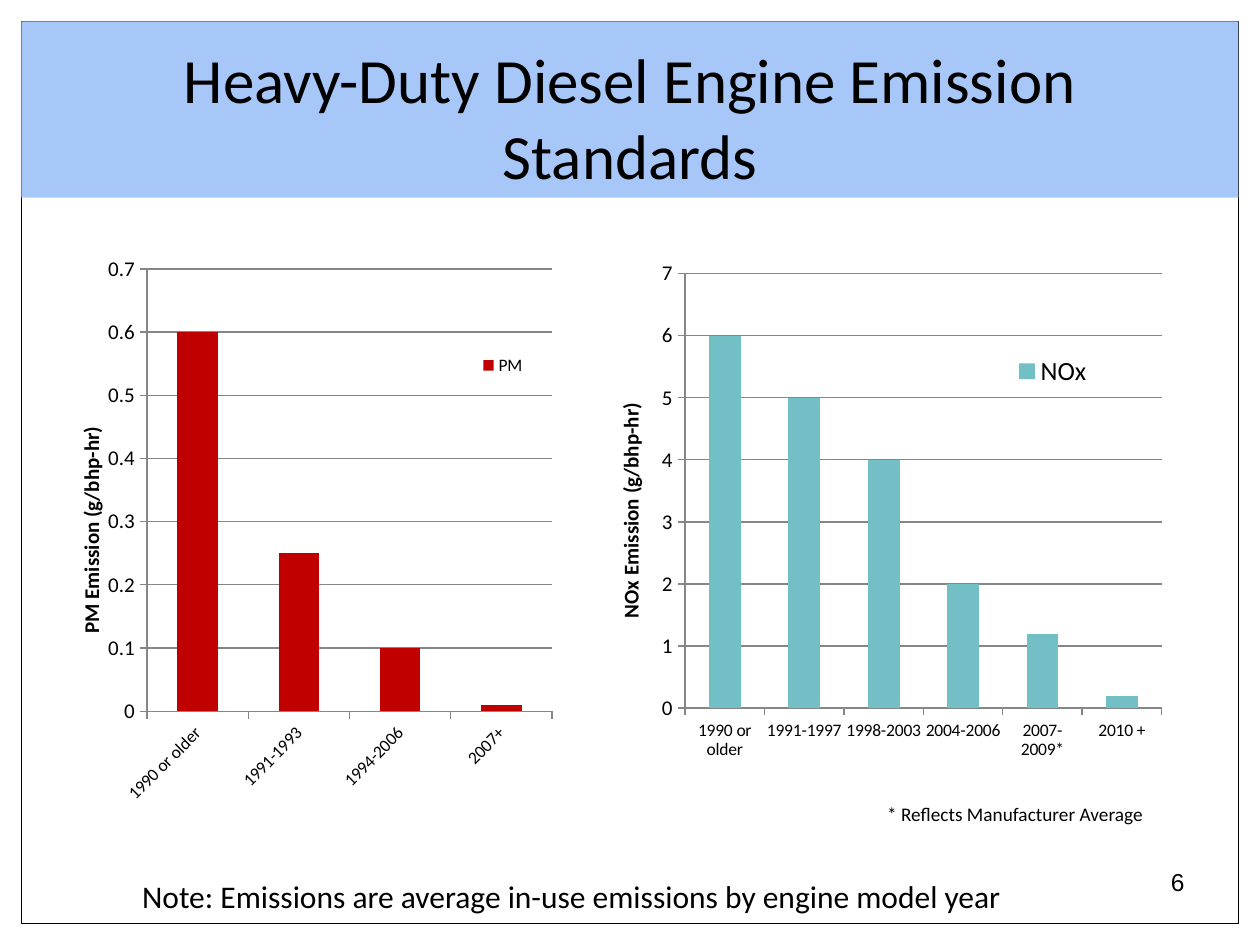
from dataclasses import dataclass
from lxml import etree
from pptx import Presentation, util as u
from pptx.chart import data as chart_data
from pptx.dml import color
from pptx.enum import chart as chart_enum, shapes, text
from pptx.oxml import ns


@dataclass(frozen=True)
class Theme:
    heading: str = "Calibri"
    plain: str = "Arial"
    ink: str = "000000"
    paper: str = "FFFFFF"
    band: str = "A6C7F8"
    grid: str = "868686"
    pm: str = "C00000"
    nox: str = "72BFC5"
    title: int = 36
    note: int = 18
    number: int = 14
    axis: int = 12
    footnote: int = 11
    label: int = 10
    nox_legend: int = 15


THEME = Theme()
WIDTH, HEIGHT = 10, 7.5
MARGIN = 0.17


def rgb(value):
    return color.RGBColor.from_string(value)


def style(target, **values):
    for name, value in values.items():
        setattr(target, name, value)


def style_font(font, size, name=THEME.heading, **values):
    style(font, size=u.Pt(size), name=name, **values)
    font.color.rgb = rgb(THEME.ink)


def inches(*lengths):
    return [u.Inches(length) for length in lengths]


def add_panel(page, height, fill, line=None):
    panel = page.shapes.add_shape(
        shapes.MSO_SHAPE.RECTANGLE, *inches(MARGIN, MARGIN, WIDTH - 2 * MARGIN, height))
    panel.shadow.inherit = False
    panel.fill.solid()
    panel.fill.fore_color.rgb = rgb(fill)
    if line:
        panel.line.color.rgb = rgb(line)
        panel.line.width = u.Pt(0.75)
    else:
        panel.line.fill.background()
    return panel


def write(frame, words, size, name=THEME.heading, align=text.PP_ALIGN.LEFT):
    frame.word_wrap = True
    para = frame.paragraphs[0]
    para.alignment = align
    span = para.add_run()
    span.text = words
    style_font(span.font, size, name)


def set_title(page, words):
    title = page.shapes.title
    left, top, width, height = inches(0.5, 0.3, 9, 1.25)
    style(title, left=left, top=top, width=width, height=height)
    style(title.text_frame, auto_size=text.MSO_AUTO_SIZE.NONE,
          vertical_anchor=text.MSO_ANCHOR.MIDDLE)
    write(title.text_frame, words, THEME.title, align=text.PP_ALIGN.CENTER)


def add_text(page, place, words, size, **options):
    box = page.shapes.add_textbox(*inches(*place))
    write(box.text_frame, words, size, **options)


def make_layout(shares, inner=False):
    layout = etree.Element(ns.qn("c:layout"))
    manual = etree.SubElement(layout, ns.qn("c:manualLayout"))
    settings = [("layoutTarget", "inner")] if inner else []
    settings += [("xMode", "edge"), ("yMode", "edge"), *zip("xywh", shares)]
    for name, value in settings:
        etree.SubElement(manual, ns.qn(f"c:{name}")).set("val", str(value))
    return layout


def place_parts(chart, plot, legend):
    for old in chart.element.xpath("//c:plotArea/c:layout | //c:legend/c:layout"):
        old.getparent().remove(old)
    chart.element.xpath("//c:plotArea")[0].insert(0, make_layout(plot, inner=True))
    chart.element.xpath("//c:legendPos")[0].addnext(make_layout(legend))


def format_axes(chart, title, top, rotation):
    values, categories = chart.value_axis, chart.category_axis
    style(values, minimum_scale=0, maximum_scale=top, major_unit=top / 7,
          has_major_gridlines=True)
    values.major_gridlines.format.line.color.rgb = rgb(THEME.grid)
    for axis, size in ((values, THEME.axis), (categories, THEME.label)):
        style(axis, major_tick_mark=chart_enum.XL_TICK_MARK.OUTSIDE,
              minor_tick_mark=chart_enum.XL_TICK_MARK.NONE)
        axis.format.line.color.rgb = rgb(THEME.grid)
        style_font(axis.tick_labels.font, size)
    style(values.tick_labels, number_format="General", number_format_is_linked=False)
    span = values.axis_title.text_frame.paragraphs[0].add_run()
    span.text = title
    style_font(span.font, THEME.axis, bold=True)
    for target, degrees in (("c:valAx/c:title//a:bodyPr", -90),
                            ("c:catAx/c:txPr/a:bodyPr", rotation)):
        body = chart.element.xpath(f"//{target}")[0]
        body.set("rot", str(degrees * 60000))
        body.set("vert", "horz")


def add_columns(page, place, name, points, fill, top, rotation, plot, legend, legend_size):
    source = chart_data.CategoryChartData()
    source.categories = list(points)
    source.add_series(name, list(points.values()))
    chart = page.shapes.add_chart(
        chart_enum.XL_CHART_TYPE.COLUMN_CLUSTERED, *inches(*place), source).chart
    style(chart, has_title=False, has_legend=True)
    style_font(chart.font, THEME.label, THEME.plain)
    style(chart.legend, position=chart_enum.XL_LEGEND_POSITION.RIGHT, include_in_layout=False)
    style_font(chart.legend.font, legend_size)
    style(chart.plots[0], gap_width=150, vary_by_categories=False)
    bars = chart.plots[0].series[0]
    bars.format.fill.solid()
    bars.format.fill.fore_color.rgb = rgb(fill)
    format_axes(chart, f"{name} Emission (g/bhp-hr)", top, rotation)
    place_parts(chart, plot, legend)


def main():
    deck = Presentation()
    style(deck, slide_width=u.Inches(WIDTH), slide_height=u.Inches(HEIGHT))
    page = deck.slides.add_slide(deck.slide_layouts[5])

    band = add_panel(page, 1.4, THEME.band)
    frame = add_panel(page, HEIGHT - 2 * MARGIN, THEME.paper, THEME.ink)
    tree = page.shapes.element
    tree.insert(2, band.element)
    tree.insert(2, frame.element)

    set_title(page, "Heavy-Duty Diesel Engine Emission Standards")
    right = text.PP_ALIGN.RIGHT
    add_text(page, (7.17, 6.83, 2.33, 0.52), "6", THEME.number, name=THEME.plain, align=right)
    add_text(page, (6.29, 6.32, 2.88, 0.38), "* Reflects Manufacturer Average",
             THEME.footnote, align=right)
    add_columns(
        page, (0.58, 2, 3.92, 4.5), "PM",
        {"1990 or older": 0.6, "1991-1993": 0.25, "1994-2006": 0.1, "2007+": 0.01},
        THEME.pm, top=0.7, rotation=-45, plot=(0.15, 0.03, 0.82, 0.78),
        legend=(0.81, 0.17, 0.12, 0.06), legend_size=THEME.label)
    add_columns(
        page, (4.83, 2.04, 4.67, 4.42), "NOx",
        {"1990 or older": 6, "1991-1997": 5, "1998-2003": 4, "2004-2006": 2,
         "2007-2009*": 1.2, "2010 +": 0.2},
        THEME.nox, top=7, rotation=0, plot=(0.13, 0.03, 0.81, 0.78),
        legend=(0.68, 0.17, 0.15, 0.07), legend_size=THEME.nox_legend)
    add_text(page, (1.03, 6.91, 7.97, 0.4),
             "Note: Emissions are average in-use emissions by engine model year", THEME.note)
    deck.save("out.pptx")


if __name__ == "__main__":
    main()
